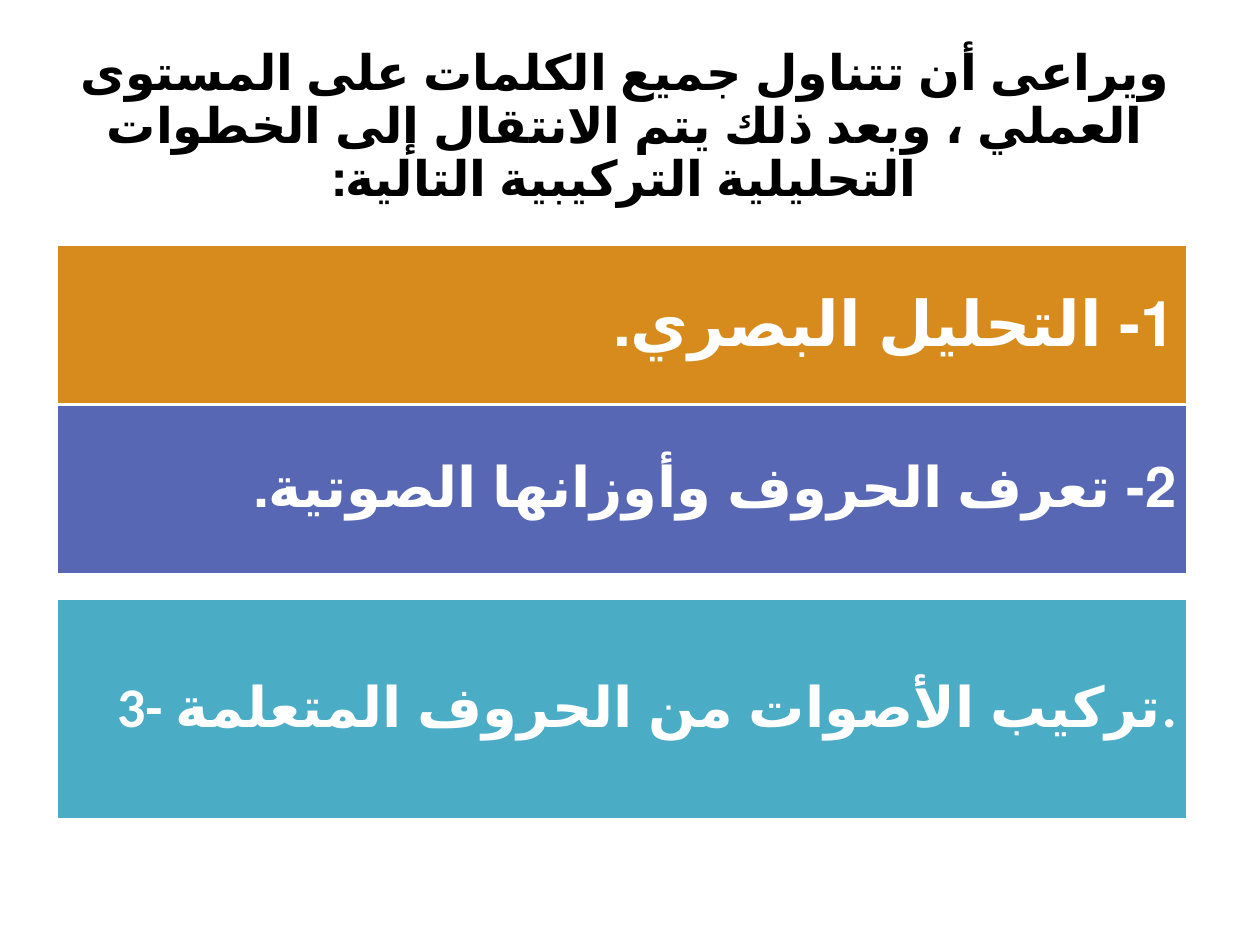
from dataclasses import dataclass

from pptx import Presentation
from pptx.dml.color import RGBColor
from pptx.enum.lang import MSO_LANGUAGE_ID
from pptx.enum.shapes import MSO_SHAPE
from pptx.enum.text import MSO_ANCHOR, PP_ALIGN
from pptx.util import Inches, Pt

RECTANGLE = MSO_SHAPE.RECTANGLE
MIDDLE = MSO_ANCHOR.MIDDLE
CENTER, RIGHT = PP_ALIGN.CENTER, PP_ALIGN.RIGHT
ARABIC = MSO_LANGUAGE_ID.ARABIC


@dataclass(frozen=True)
class Theme:
    font: str = "Calibri"
    black: RGBColor = RGBColor(0, 0, 0)
    white: RGBColor = RGBColor(255, 255, 255)
    orange: RGBColor = RGBColor.from_string("D68B1C")
    indigo: RGBColor = RGBColor.from_string("5767B4")
    teal: RGBColor = RGBColor.from_string("4BACC6")
    title_size: int = 28
    first_size: int = 36
    step_size: int = 32
    border: int = 2


THEME = Theme()
TITLE = ("ويراعى أن تتناول جميع الكلمات على المستوى العملي ، "
         "وبعد ذلك يتم الانتقال إلى الخطوات التحليلية التركيبية التالية:")
# top, height, fill, text size, right-to-left, text
STEPS = [
    (1.94, 1.29, THEME.orange, THEME.first_size, True, "1- التحليل البصري."),
    (3.21, 1.35, THEME.indigo, THEME.step_size, True,
     "2- تعرف الحروف وأوزانها الصوتية."),
    (4.75, 1.76, THEME.teal, THEME.step_size, False,
     "3- تركيب الأصوات من الحروف المتعلمة."),
]


def add_bar(slide, left, top, width, height, fill):
    sp = slide.shapes.add_shape(RECTANGLE, Inches(left), Inches(top),
                                Inches(width), Inches(height))
    sp.shadow.inherit = False
    sp.fill.solid()
    sp.fill.fore_color.rgb = fill
    sp.line.color.rgb = THEME.white
    sp.line.width = Pt(THEME.border)
    return sp


def write_text(sp, text, size, color, align, rtl=True, inset=0.09):
    tf = sp.text_frame
    tf.word_wrap = True
    tf.vertical_anchor = MIDDLE
    tf.margin_left = tf.margin_right = Inches(inset)
    tf.margin_top = tf.margin_bottom = Inches(inset)
    p = tf.paragraphs[0]
    p.alignment = align
    p.line_spacing = 0.9
    p._p.get_or_add_pPr().set("rtl", "1" if rtl else "0")
    r = p.add_run()
    r.text = text
    r.font.name = THEME.font
    r.font.size = Pt(size)
    r.font.bold = True
    r.font.language_id = ARABIC
    r.font.color.rgb = color


def add_title(slide, left, top, width, height):
    sp = add_bar(slide, left, top, width, height, THEME.white)
    write_text(sp, TITLE, THEME.title_size, THEME.black, CENTER)


def add_steps(slide, left, width):
    """Stack the coloured step bars in one column."""
    for top, height, fill, size, rtl, text in STEPS:
        sp = add_bar(slide, left, top, width, height, fill)
        write_text(sp, text, size, THEME.white, RIGHT, rtl,
                   inset=0.1 if size == THEME.first_size else 0.09)


def main():
    prs = Presentation()
    prs.slide_width, prs.slide_height = Inches(10), Inches(7.5)
    slide = prs.slides.add_slide(prs.slide_layouts[6])
    add_title(slide, 0.43, 0.24, 9.06, 1.54)
    add_steps(slide, 0.45, 8.98)
    prs.save("out.pptx")


if __name__ == "__main__":
    main()
